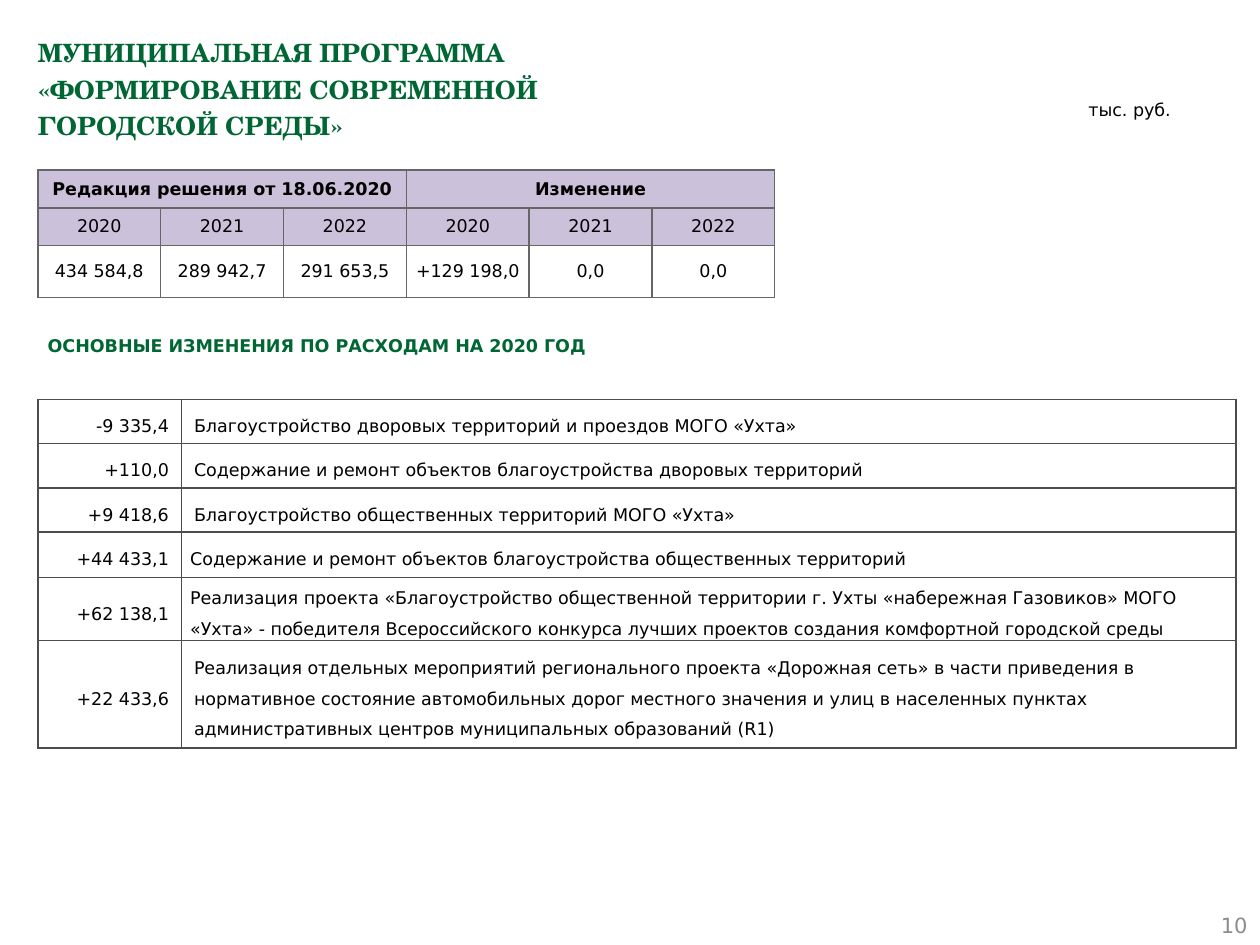
from dataclasses import dataclass
from typing import Optional

from lxml import etree
from pptx import Presentation
from pptx import util as u
from pptx.dml.color import RGBColor
from pptx.enum import shapes, text
from pptx.oxml.ns import qn

W, H = 10, 7.5
SANS, SERIF = "DejaVu Sans", "TeX Gyre Schola"
GREEN, BLACK, GREY, LILAC = "006633", "000000", "8C8C8C", "CCC1DA"
LEFT, CENTER, RIGHT = text.PP_ALIGN.LEFT, text.PP_ALIGN.CENTER, text.PP_ALIGN.RIGHT
TOP, MIDDLE = text.MSO_ANCHOR.TOP, text.MSO_ANCHOR.MIDDLE


@dataclass
class Style:
    size: float = 10
    color: str = BLACK
    bold: bool = False
    font: str = SANS
    align: text.PP_ALIGN = LEFT
    spacing: Optional[float] = None
    after: Optional[float] = None


@dataclass
class Change:
    amount: str
    purpose: str
    height: float
    tight: bool = False  # narrow cell margins


def rgb(value: str) -> RGBColor:
    return RGBColor.from_string(value)


def write(tf, lines: list[str], style: Style) -> None:
    """Fill the first paragraph, one run per line."""
    p = tf.paragraphs[0]
    p.alignment = style.align
    if style.spacing:
        p.line_spacing = style.spacing
    if style.after:
        p.space_after = u.Pt(style.after)
    for i, line in enumerate(lines):
        if i:
            p.add_line_break()
        r = p.add_run()
        r.text = line
        r.font.name, r.font.size, r.font.bold = style.font, u.Pt(style.size), style.bold
        r.font.color.rgb = rgb(style.color)


def place(sp, left: float, top: float, width: float, height: float) -> None:
    sp.left, sp.top = u.Inches(left), u.Inches(top)
    sp.width, sp.height = u.Inches(width), u.Inches(height)


def label(s, box: tuple, line: str, style: Style, anchor=TOP):
    sp = s.shapes.add_textbox(*map(u.Inches, box))
    tf = sp.text_frame
    tf.word_wrap, tf.vertical_anchor = True, anchor
    write(tf, [line], style)
    return sp


def add_grid(s, left: float, top: float, cols: list[float], rows: list[float]):
    box = map(u.Inches, (left, top, sum(cols), sum(rows)))
    table = s.shapes.add_table(len(rows), len(cols), *box).table
    table.first_row = table.horz_banding = False
    for col, width in zip(table.columns, cols):
        col.width = u.Inches(width)
    for row, height in zip(table.rows, rows):
        row.height = u.Inches(height)
    return table


def set_cell(cell, value: str, style: Style, margins: tuple, fill: Optional[str] = None) -> None:
    cell.vertical_anchor = MIDDLE
    cell.margin_left = cell.margin_right = u.Inches(margins[0])
    cell.margin_top = cell.margin_bottom = u.Inches(margins[1])
    if fill:
        cell.fill.solid()
        cell.fill.fore_color.rgb = rgb(fill)
    else:
        cell.fill.background()
    write(cell.text_frame, [value], style)


def set_borders(table, color: str) -> None:
    for cell in table.iter_cells():
        props = cell._tc.get_or_add_tcPr()
        for i, side in enumerate(("lnL", "lnR", "lnT", "lnB")):
            ln = etree.Element(qn(f"a:{side}"), w=str(u.Pt(1)))
            solid = etree.SubElement(ln, qn("a:solidFill"))
            etree.SubElement(solid, qn("a:srgbClr"), val=color)
            props.insert(i, ln)


def add_totals(s) -> None:
    table = add_grid(s, 0.03 * W, 0.18 * H, [0.975] * 6, [0.3, 0.3, 0.41])
    margins = (0.05, 0.05)
    for col, heading in ((0, "Редакция решения от 18.06.2020"), (3, "Изменение")):
        head = table.cell(0, col)
        head.merge(table.cell(0, col + 2))
        set_cell(head, heading, Style(bold=True, align=CENTER), margins, LILAC)
    years = ["2020", "2021", "2022"] * 2
    sums = ["434 584,8", "289 942,7", "291 653,5", "+129 198,0", "0,0", "0,0"]
    for row, values, fill in ((1, years, LILAC), (2, sums, None)):
        for col, value in enumerate(values):
            set_cell(table.cell(row, col), value, Style(align=CENTER), margins, fill)
    set_borders(table, "666666")


def add_changes(s, changes: list[Change]) -> None:
    table = add_grid(s, 0.03 * W, 3.17, [1.14, 8.37], [c.height for c in changes])
    for row, c in enumerate(changes):
        set_cell(table.cell(row, 0), c.amount,
                 Style(align=RIGHT, spacing=1.5, after=10), (0.1, 0.05))
        set_cell(table.cell(row, 1), c.purpose, Style(spacing=1.5, after=10),
                 (0.07, 0) if c.tight else (0.1, 0.05))
    set_borders(table, "4D4D4D")


CHANGES = [
    Change("-9 335,4", "Благоустройство дворовых территорий и проездов МОГО «Ухта»", 0.34),
    Change("+110,0", "Содержание и ремонт объектов благоустройства дворовых территорий", 0.34),
    Change("+9 418,6", "Благоустройство общественных территорий МОГО «Ухта»", 0.34),
    Change("+44 433,1", "Содержание и ремонт объектов благоустройства общественных территорий",
           0.36, True),
    Change("+62 138,1", "Реализация проекта «Благоустройство общественной территории г. Ухты "
           "«набережная Газовиков» МОГО «Ухта» - победителя Всероссийского конкурса лучших "
           "проектов создания комфортной городской среды", 0.48, True),
    Change("+22 433,6", "Реализация отдельных мероприятий регионального проекта «Дорожная сеть» "
           "в части приведения в нормативное состояние автомобильных дорог местного значения "
           "и улиц в населенных пунктах административных центров муниципальных образований (R1)",
           0.83),
]


def main() -> None:
    prs = Presentation()
    prs.slide_width, prs.slide_height = u.Inches(W), u.Inches(H)
    s = prs.slides.add_slide(prs.slide_layouts[5])

    # Title
    title = s.shapes.title
    place(title, 0.2, 0.2, 9.61, 0.79)
    tf = title.text_frame
    tf.auto_size, tf.vertical_anchor, tf.word_wrap = text.MSO_AUTO_SIZE.NONE, TOP, True
    write(tf, ["МУНИЦИПАЛЬНАЯ ПРОГРАММА ", "«ФОРМИРОВАНИЕ СОВРЕМЕННОЙ", "ГОРОДСКОЙ СРЕДЫ»"],
          Style(14.4, GREEN, True, SERIF, spacing=1.2))

    # Page number
    label(s, (7.67, 7.14, 2.33, 0.4), "10", Style(12, GREY, align=RIGHT), MIDDLE)

    # Section heading
    sp = s.shapes.add_shape(shapes.MSO_SHAPE.PENTAGON, *map(u.Inches, (0.28, 2.53, 5.32, 0.43)))
    sp.adjustments[0] = 0
    sp.shadow.inherit = False
    sp.fill.background()
    sp.line.fill.background()
    sp.text_frame.word_wrap, sp.text_frame.vertical_anchor = True, MIDDLE
    write(sp.text_frame, ["ОСНОВНЫЕ ИЗМЕНЕНИЯ ПО РАСХОДАМ НА 2020 ГОД"], Style(color=GREEN, bold=True))

    # Tables and unit of measure
    add_changes(s, CHANGES)
    unit = label(s, (8.54, 0.7, 1.01, 0.3), "тыс. руб.", Style(spacing=1.2))
    unit.text_frame.auto_size = text.MSO_AUTO_SIZE.SHAPE_TO_FIT_TEXT
    add_totals(s)

    prs.save("out.pptx")


if __name__ == "__main__":
    main()
